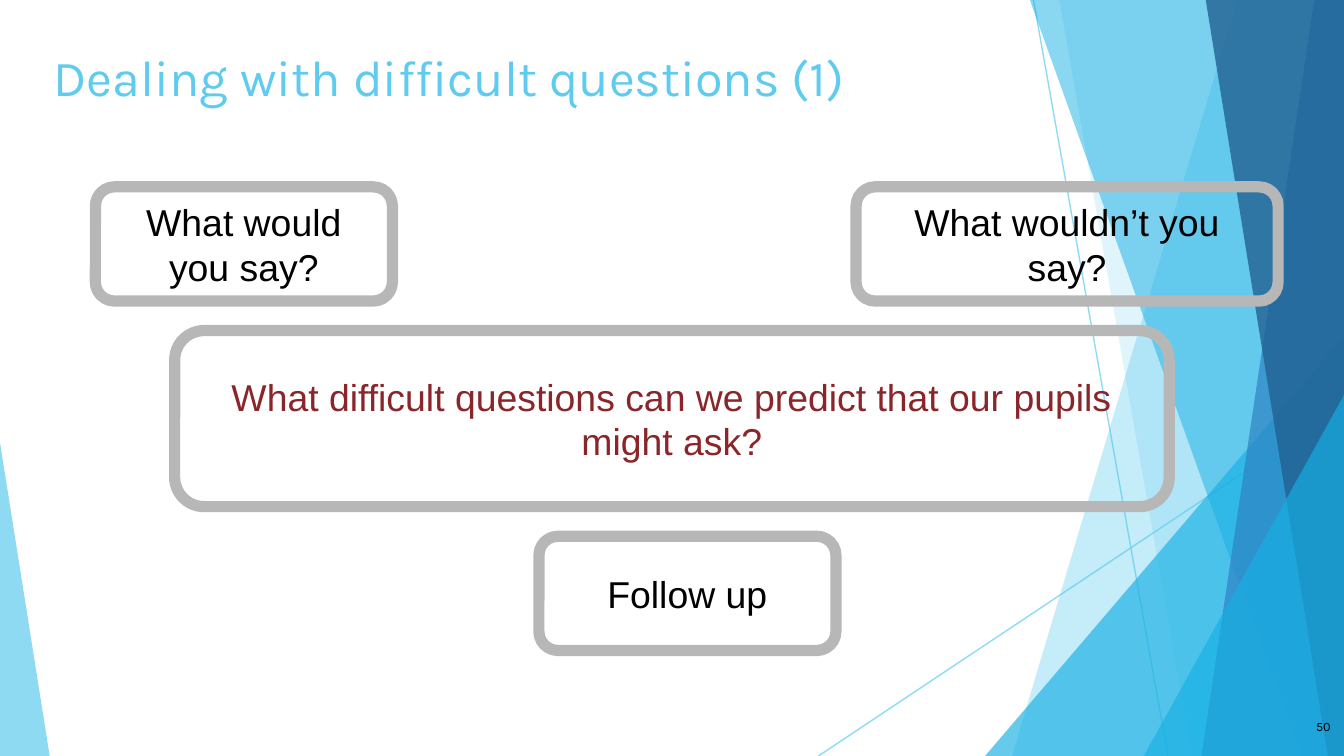
import pptx
import pptx.util
import pptx.dml.color
import pptx.enum.shapes
import pptx.enum.text
import pptx.oxml.ns
import lxml.etree

Inches = pptx.util.Inches
Align = pptx.enum.text.PP_ALIGN
Anchor = pptx.enum.text.MSO_ANCHOR
Preset = pptx.enum.shapes.MSO_SHAPE

WIDTH = 10
HEIGHT = WIDTH * 9 / 16
TOP = -0.01

THEME = {
    "sky": "5FCBEF", "cyan": "17B0E4", "blue": "2E83C3", "navy": "226292",
    "border": "B7B7B7", "ink": "000000", "accent": "8A2529",
    "heading": "Karla", "body": "Arial",
    "title": 27, "prompt": 20, "number": 6.8,
    "border_width": 6, "ray_width": 0.75,
}

RAYS = [((7.69, 0), (8.69, HEIGHT)), ((WIDTH, 3.02), (6.09, HEIGHT))]

FACETS = [
    ("band", 9.21, 7.53, "sky", 36),
    ("band", 7.88, 8.87, "sky", 20),
    ("triangle", (7.33, 2.5, 2.67, HEIGHT - 2.5), 1, "cyan", 66),
    ("band", 7.66, 9.68, "cyan", 50),
    ("band", 9.78, 8.94, "blue", 70),
    ("band", 8.97, 9.88, "navy", 80),
    ("triangle", (8.51, 2.94, 1.49, HEIGHT - 2.94), 1, "cyan", 66),
    ("triangle", (0, 3.29, 0.37, HEIGHT - 3.29), 0, "sky", 70),
]

TITLE = ("Dealing with difficult questions (1)", (0.3, 0.24, 8.48, 0.63))
NUMBER = ("50", (9.4, 5.19, 0.6, 0.43))

PROMPTS = [
    ("What difficult questions can we predict that our pupils might ask?",
     (1.3, 2.46, 7.4, 1.31), "accent"),
    ("What would you say?", (0.71, 1.39, 2.21, 0.85), "ink"),
    ("What wouldn’t you say?", (6.37, 1.39, 3.14, 0.85), "ink"),
    ("Follow up", (4.01, 3.99, 2.21, 0.85), "ink"),
]


def color(name):
    return pptx.dml.color.RGBColor.from_string(THEME[name])


def lengths(values):
    return [Inches(value) for value in values]


def set_opacity(paint, percent):
    value = paint.find(".//" + pptx.oxml.ns.qn("a:srgbClr"))
    alpha = lxml.etree.SubElement(value, pptx.oxml.ns.qn("a:alpha"))
    alpha.set("val", str(percent * 1000))


def write(box, text, font, size, ink, align=Align.LEFT, anchor=Anchor.TOP):
    frame = box.text_frame
    frame.word_wrap = True
    frame.vertical_anchor = anchor
    frame.margin_left = frame.margin_right = Inches(0.1)
    frame.margin_top = frame.margin_bottom = Inches(0.1)
    para = frame.paragraphs[0]
    para.alignment = align
    span = para.add_run()
    span.text = text
    span.font.name = THEME[font]
    span.font.size = pptx.util.Pt(THEME[size])
    span.font.color.rgb = color(ink)


def add_ray(page, start, end):
    ray = page.shapes.add_connector(
        pptx.enum.shapes.MSO_CONNECTOR.STRAIGHT, *lengths(start + end))
    ray.line.color.rgb = color("sky")
    ray.line.width = pptx.util.Pt(THEME["ray_width"])
    properties = ray._element.spPr
    set_opacity(properties, 70)
    lxml.etree.SubElement(properties, pptx.oxml.ns.qn("a:effectLst"))


def add_band(page, top_x, bottom_x):
    corners = [(top_x, TOP), (WIDTH, TOP), (WIDTH, HEIGHT), (bottom_x, HEIGHT)]
    points = [lengths(corner) for corner in corners]
    builder = page.shapes.build_freeform(*points[0])
    builder.add_line_segments(points[1:], close=True)
    return builder.convert_to_shape()


def add_triangle(page, place, apex):
    triangle = page.shapes.add_shape(Preset.ISOSCELES_TRIANGLE, *lengths(place))
    triangle.adjustments[0] = apex
    return triangle


def add_facet(page, kind, first, second, fill, opacity):
    facet = {"band": add_band, "triangle": add_triangle}[kind](page, first, second)
    facet.shadow.inherit = False
    facet.fill.solid()
    facet.fill.fore_color.rgb = color(fill)
    facet.line.fill.background()
    set_opacity(facet._element.spPr, opacity)


def add_prompt(page, text, place, ink):
    box = page.shapes.add_shape(Preset.ROUNDED_RECTANGLE, *lengths(place))
    box.shadow.inherit = False
    box.adjustments[0] = 0.167
    box.fill.background()
    box.line.color.rgb = color("border")
    box.line.width = pptx.util.Pt(THEME["border_width"])
    write(box, text, "body", "prompt", ink, align=Align.CENTER, anchor=Anchor.MIDDLE)


def main():
    deck = pptx.Presentation()
    deck.slide_width, deck.slide_height = lengths((WIDTH, HEIGHT))
    page = deck.slides.add_slide(deck.slide_layouts[6])

    for start, end in RAYS:
        add_ray(page, start, end)
    for facet in FACETS:
        add_facet(page, *facet)

    text, place = TITLE
    write(page.shapes.add_textbox(*lengths(place)), text, "heading", "title", "sky")
    text, place = NUMBER
    write(page.shapes.add_textbox(*lengths(place)), text, "heading", "number", "ink",
          align=Align.RIGHT, anchor=Anchor.MIDDLE)

    for prompt in PROMPTS:
        add_prompt(page, *prompt)
    deck.save("out.pptx")


if __name__ == "__main__":
    main()
